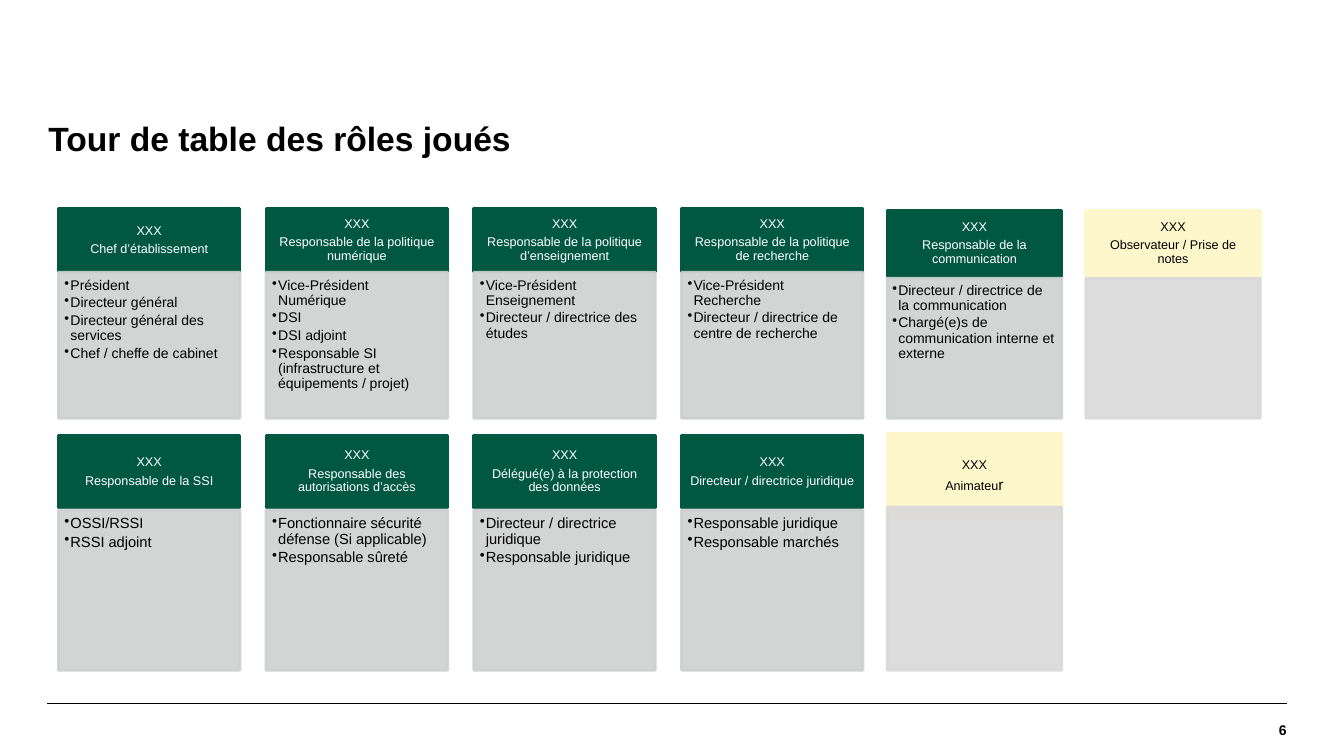
import dataclasses

import lxml.etree
import pptx
import pptx.dml.color
import pptx.enum.shapes
import pptx.enum.text
import pptx.oxml.ns
import pptx.shapes.autoshape
import pptx.slide
import pptx.text.text
import pptx.util

PX = 9144
ALIGN = pptx.enum.text.PP_ALIGN
ANCHOR = pptx.enum.text.MSO_ANCHOR
GREEN, SAGE, CREAM, GREY = "005841", "CCD1CF", "FFF7CC", "D9D9D9"
BLACK, WHITE = "000000", "FFFFFF"


@dataclasses.dataclass(frozen=True)
class Band:
    left: int
    pitch: int
    width: int
    header_top: int
    header_height: int
    body_top: int
    body_height: int
    body_insets: tuple[int, int, int, int]
    list_size: float = 10


@dataclasses.dataclass(frozen=True)
class Card:
    role: str
    members: tuple[str, ...] = ()
    large_ending: str = ""
    header_color: str = GREEN
    header_text_color: str = WHITE
    body_color: str = SAGE


def facilitation_card(role: str, large_ending: str = "") -> Card:
    return Card(role, (), large_ending, CREAM, BLACK, GREY)


CARD_BANDS = [
    (Band(58, 206, 180, 207, 63, 270, 145, (6, 6, 8, 9)), [
        Card("Chef d’établissement", (
            "Président", "Directeur général", "Directeur général des services",
            "Chef / cheffe de cabinet")),
        Card("Responsable de la politique numérique", (
            "Vice-Président Numérique", "DSI", "DSI adjoint",
            "Responsable SI (infrastructure et équipements / projet)")),
        Card("Responsable de la politique d’enseignement", (
            "Vice-Président Enseignement", "Directeur / directrice des études")),
        Card("Responsable de la politique de recherche", (
            "Vice-Président Recherche",
            "Directeur / directrice de centre de recherche")),
    ]),
    (Band(58, 206, 180, 432, 72, 506, 159, (6, 6, 9, 10), 10.5), [
        Card("Responsable de la SSI", ("OSSI/RSSI", "RSSI adjoint")),
        Card("Responsable des autorisations d’accès", (
            "Fonctionnaire sécurité défense (Si applicable)",
            "Responsable sûreté")),
        Card("Délégué(e) à la protection des données", (
            "Directeur / directrice juridique", "Responsable juridique")),
        Card("Directeur / directrice juridique", (
            "Responsable juridique", "Responsable marchés")),
    ]),
    (Band(880, 197, 173, 209, 65, 276, 139, (5, 5, 6, 7)), [
        Card("Responsable de la communication", (
            "Directeur / directrice de la communication",
            "Chargé(e)s de communication interne et externe")),
        facilitation_card("Observateur / Prise de notes"),
    ]),
    (Band(880, 197, 173, 430, 84, 503, 162, (5, 5, 6, 7)), [
        facilitation_card("Animateu", "r"),
    ]),
]


def px(length: int) -> pptx.util.Emu:
    return pptx.util.Emu(length * PX)


def rgb(color: str) -> pptx.dml.color.RGBColor:
    return pptx.dml.color.RGBColor.from_string(color)


def write_run(paragraph: pptx.text.text._Paragraph, text: str, *, size: float,
              color: str = BLACK, bold: bool = False) -> None:
    run = paragraph.add_run()
    run.text = text
    run.font.name = "Arial"
    run.font.size = pptx.util.Pt(size)
    run.font.bold = bold
    run.font.color.rgb = rgb(color)


def write_paragraph(frame: pptx.text.text.TextFrame, text: str, *, size: float,
                    color: str = BLACK, bold: bool = False,
                    align: ALIGN = ALIGN.LEFT, space_after: float = 0,
                    line_spacing: float = 0.9, bullet: bool = False,
                    margin: int = 0) -> pptx.text.text._Paragraph:
    paragraph = frame.paragraphs[0]
    if paragraph.runs:
        paragraph = frame.add_paragraph()
    properties = paragraph._p.get_or_add_pPr()
    properties.set("marL", str(px(margin)))
    properties.set("indent", str(px(-margin if bullet else 0)))
    if bullet:
        mark = lxml.etree.SubElement(properties, pptx.oxml.ns.qn("a:buChar"))
        mark.set("char", "•")
    paragraph.alignment = align
    paragraph.line_spacing = line_spacing
    paragraph.space_before = pptx.util.Pt(0)
    paragraph.space_after = pptx.util.Pt(space_after)
    write_run(paragraph, text, size=size, color=color, bold=bold)
    return paragraph


def set_frame(frame: pptx.text.text.TextFrame, anchor: ANCHOR,
              insets: tuple[int, int, int, int]) -> None:
    frame.word_wrap = True
    frame.auto_size = pptx.enum.text.MSO_AUTO_SIZE.NONE
    frame.vertical_anchor = anchor
    (frame.margin_left, frame.margin_top,
     frame.margin_right, frame.margin_bottom) = map(px, insets)


def add_panel(slide: pptx.slide.Slide, left: int, top: int, width: int,
              height: int, color: str,
              opacity: int = 100) -> pptx.shapes.autoshape.Shape:
    shape = slide.shapes.add_shape(
        pptx.enum.shapes.MSO_SHAPE.RECTANGLE,
        px(left), px(top), px(width), px(height))
    shape.shadow.inherit = False
    shape.fill.solid()
    shape.fill.fore_color.rgb = rgb(color)
    shape.line.color.rgb = rgb(color)
    shape.line.width = pptx.util.Pt(2)
    if opacity < 100:
        for paint in shape._element.spPr.iter(pptx.oxml.ns.qn("a:srgbClr")):
            alpha = lxml.etree.SubElement(paint, pptx.oxml.ns.qn("a:alpha"))
            alpha.set("val", str(opacity * 1000))
    return shape


def add_card(slide: pptx.slide.Slide, band: Band, column: int, card: Card) -> None:
    left = band.left + column * band.pitch
    header = add_panel(slide, left, band.header_top, band.width,
                       band.header_height, card.header_color)
    set_frame(header.text_frame, ANCHOR.MIDDLE, (7, 4, 7, 4))
    for text in ("XXX", card.role):
        paragraph = write_paragraph(
            header.text_frame, text, size=9, color=card.header_text_color,
            align=ALIGN.CENTER, space_after=3.5)
    if card.large_ending:
        write_run(paragraph, card.large_ending, size=11,
                  color=card.header_text_color)

    body = add_panel(slide, left, band.body_top, band.width,
                     band.body_height, card.body_color, opacity=90)
    set_frame(body.text_frame, ANCHOR.TOP, band.body_insets)
    for member in card.members:
        write_paragraph(body.text_frame, member, size=band.list_size,
                        space_after=1.7, bullet=True, margin=6)


def add_title(slide: pptx.slide.Slide) -> None:
    title = slide.shapes.title
    title.left, title.top, title.width, title.height = map(px, (36, 100, 1228, 79))
    set_frame(title.text_frame, ANCHOR.MIDDLE, (10, 5, 10, 5))
    write_paragraph(title.text_frame, "Tour de table des rôles joués",
                    size=24, bold=True, margin=2)


def add_footer(slide: pptx.slide.Slide) -> None:
    rule = slide.shapes.add_connector(
        pptx.enum.shapes.MSO_CONNECTOR.STRAIGHT,
        px(47), px(698), px(1276), px(698))
    rule.line.color.rgb = rgb(BLACK)
    rule.line.width = pptx.util.Pt(0.8)
    lxml.etree.SubElement(rule._element.spPr, pptx.oxml.ns.qn("a:effectLst"))
    number = slide.shapes.add_textbox(px(1079), px(698), px(197), px(52))
    set_frame(number.text_frame, ANCHOR.MIDDLE, (0, 0, 0, 0))
    write_paragraph(number.text_frame, "6", size=10, bold=True,
                    align=ALIGN.RIGHT, line_spacing=1.0)


def main() -> None:
    presentation = pptx.Presentation()
    presentation.slide_width = px(1333)
    presentation.slide_height = px(750)
    slide = presentation.slides.add_slide(presentation.slide_layouts[5])
    add_footer(slide)
    add_title(slide)
    for band, cards in CARD_BANDS:
        for column, card in enumerate(cards):
            add_card(slide, band, column, card)
    presentation.save("out.pptx")


if __name__ == "__main__":
    main()
